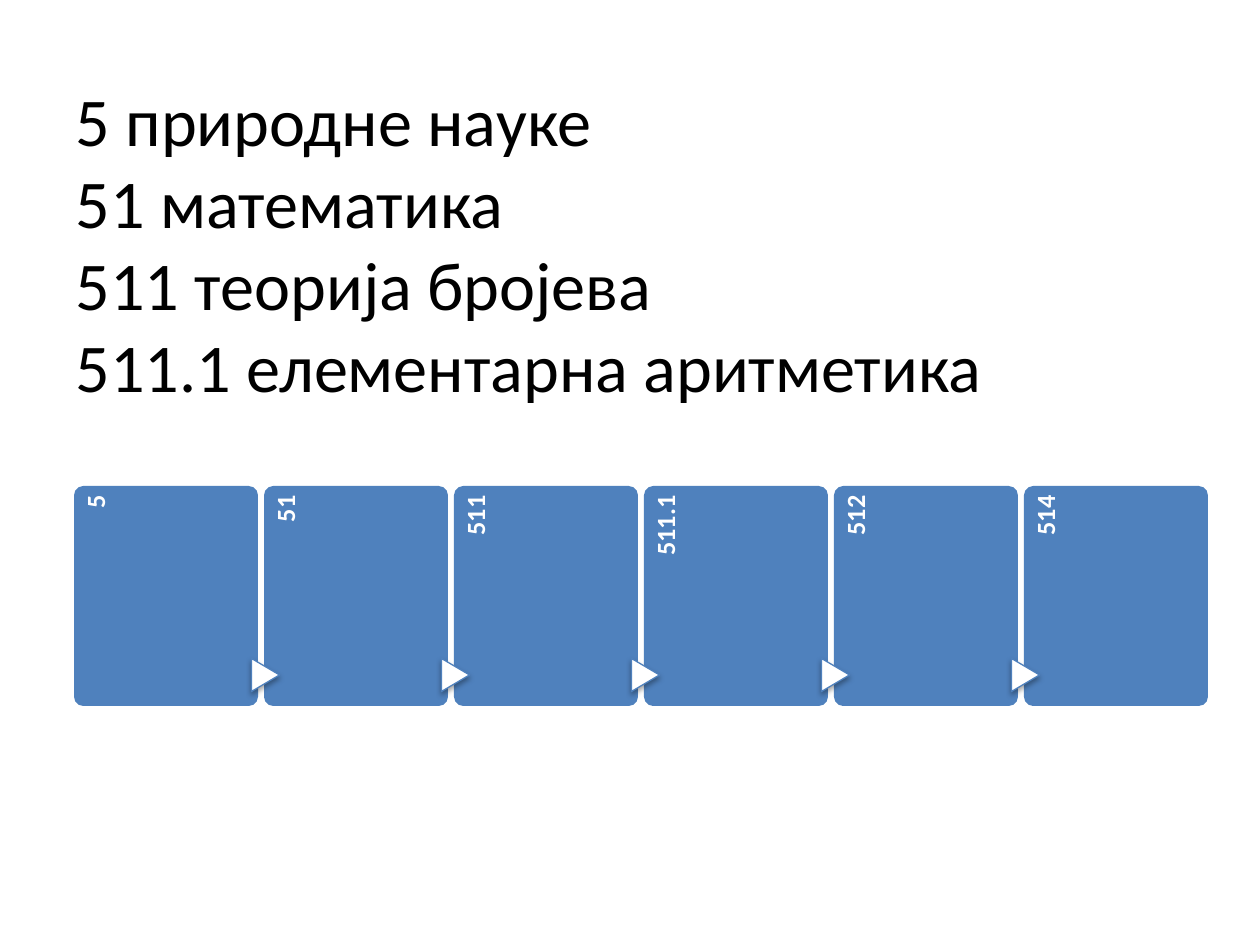
from dataclasses import dataclass
from lxml.etree import SubElement
from pptx import Presentation
from pptx.dml.color import RGBColor
from pptx.enum.shapes import MSO_SHAPE as Shp
from pptx.enum.text import MSO_ANCHOR as Anchor, MSO_AUTO_SIZE as Auto, PP_ALIGN as Align
from pptx.oxml.ns import qn
from pptx.util import Emu, Pt

PX = 914400 // 126
BLUE, WHITE, BLACK = "4F81BD", "FFFFFF", "000000"
TITLE = ("5 природне науке", "51 математика", "511 теорија бројева",
         "511.1 елементарна аритметика")
CODES = ("5", "51", "511", "511.1", "512", "514")
LEFT, TOP, PITCH = 74, 486, 190


@dataclass
class Box:
    """A rectangle in px."""
    x: int
    y: int
    w: int
    h: int

    def emu(self) -> list:
        """Return left, top, width and height as EMU."""
        return [Emu(v * PX) for v in (self.x, self.y, self.w, self.h)]


def rgb(value: str) -> RGBColor:
    """Turn a hex string into a colour."""
    return RGBColor.from_string(value)


def set_all(obj, values: dict) -> None:
    """Set every attribute named in values."""
    for name, value in values.items():
        setattr(obj, name, value)


def style_font(font, size: float, color: str, bold: bool) -> None:
    """Give a font its face, size, weight and colour."""
    set_all(font, {"name": "Calibri", "size": Pt(size), "bold": bold})
    font.color.rgb = rgb(color)


def add_title(s, lines: tuple, box: Box) -> None:
    """Fill and place the title, one line for each class."""
    sp = s.shapes.title
    set_all(sp, dict(zip(("left", "top", "width", "height"), box.emu())))
    tf = sp.text_frame
    set_all(tf, {"vertical_anchor": Anchor.MIDDLE, "auto_size": Auto.NONE, "word_wrap": True})
    p = tf.paragraphs[0]
    p.text = "\v".join(lines)
    p.alignment = Align.LEFT
    for r in p.runs:
        style_font(r.font, 39, BLACK, False)


def add_card(s, x: int) -> None:
    """Draw one rounded card."""
    sp = s.shapes.add_shape(Shp.ROUNDED_RECTANGLE, *Box(x, TOP, 184, 220).emu())
    sp.adjustments[0] = 0.05
    sp.shadow.inherit = False
    sp.fill.solid()
    sp.fill.fore_color.rgb = rgb(BLUE)
    sp.line.fill.background()


def add_label(s, x: int, code: str) -> None:
    """Write a code up the left side of a card."""
    sp = s.shapes.add_textbox(*Box(x - 71, TOP + 72, 180, 37).emu())
    sp.rotation = 270
    tf = sp.text_frame
    set_all(tf, {"word_wrap": True, "margin_left": 0, "margin_top": Emu(8 * PX),
                 "margin_right": Emu(9 * PX), "margin_bottom": 0})
    p = tf.paragraphs[0]
    set_all(p, {"alignment": Align.RIGHT, "line_spacing": 0.9})
    r = p.add_run()
    r.text = code
    style_font(r.font, 15, WHITE, True)


def add_pointer(s, x: int) -> None:
    """Draw the white triangle that leads into a card."""
    sp = s.shapes.add_shape(Shp.FLOWCHART_EXTRACT, *Box(x - 15, TOP + 175, 33, 28).emu())
    sp.rotation = 90
    sp.fill.solid()
    sp.fill.fore_color.rgb = rgb(WHITE)
    sp.line.color.rgb = rgb(BLUE)
    sp.line.width = Pt(0.75)
    sp.shadow.inherit = False
    effects = sp.fill._xPr.find(qn("a:effectLst"))
    shadow = SubElement(effects, qn("a:outerShdw"), blurRad=str(Pt(3.1)), dist=str(Pt(1.8)),
                        dir="5400000", rotWithShape="0")
    color = SubElement(shadow, qn("a:srgbClr"), val=BLACK)
    SubElement(color, qn("a:alpha"), val="35000")


def main() -> None:
    """Build the slide and save it."""
    prs = Presentation()
    set_all(prs, {"slide_width": Emu(1260 * PX), "slide_height": Emu(945 * PX)})
    s = prs.slides.add_slide(prs.slide_layouts[5])
    add_title(s, TITLE, Box(63, 76, 1134, 333))
    for i, code in enumerate(CODES):
        x = LEFT + i * PITCH
        add_card(s, x)
        add_label(s, x, code)
        if i:
            add_pointer(s, x)
    prs.save("out.pptx")


if __name__ == "__main__":
    main()
